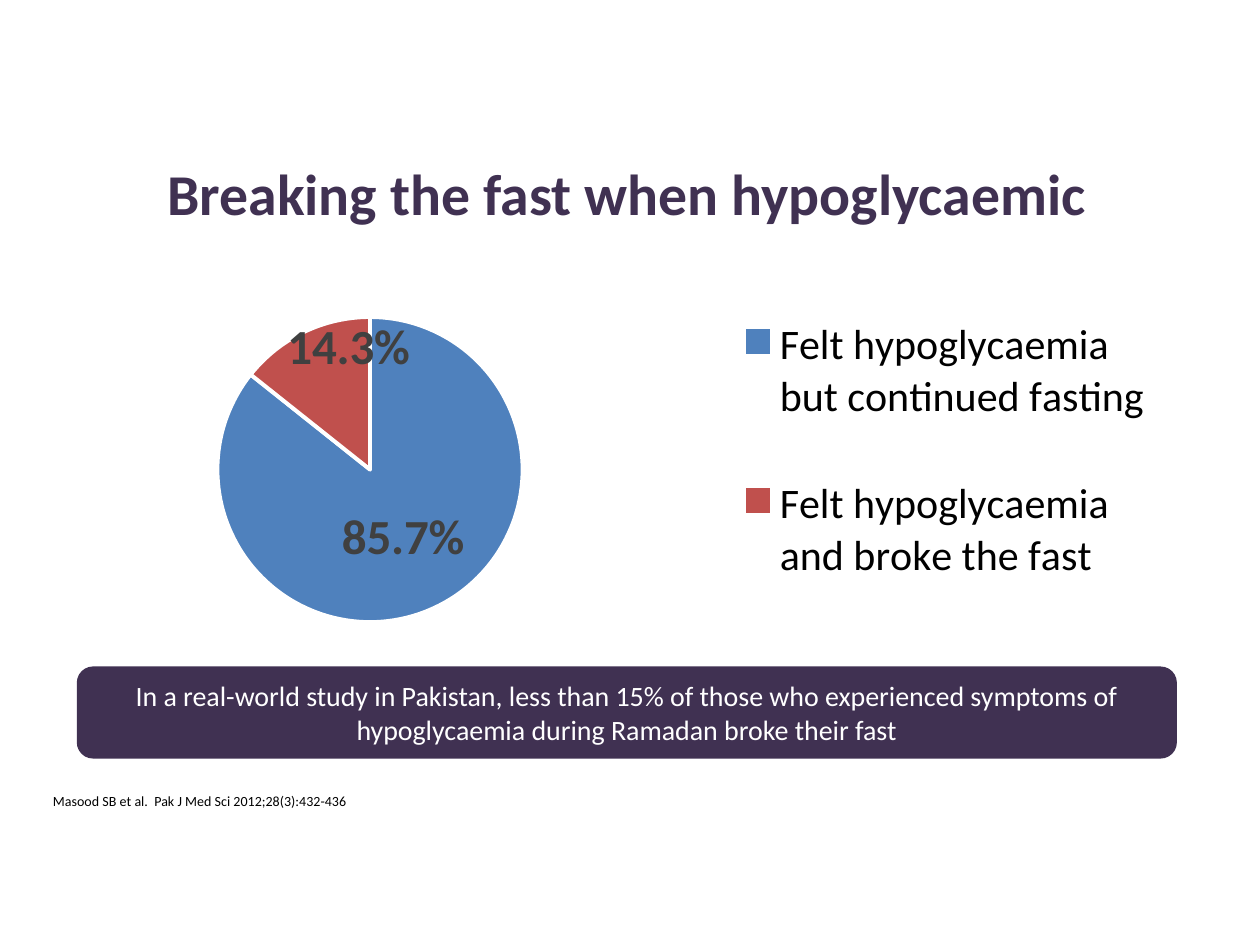
from lxml import etree
from pptx import Presentation
from pptx.chart.data import CategoryChartData
from pptx.dml.color import RGBColor
from pptx.enum.chart import XL_CHART_TYPE, XL_LABEL_POSITION, XL_LEGEND_POSITION
from pptx.enum.shapes import MSO_SHAPE
from pptx.enum.text import MSO_ANCHOR, MSO_AUTO_SIZE, PP_ALIGN
from pptx.oxml.ns import qn
from pptx.util import Inches, Pt

PIE = XL_CHART_TYPE.PIE
LABEL_CENTER = XL_LABEL_POSITION.CENTER
LEGEND_RIGHT = XL_LEGEND_POSITION.RIGHT
ROUNDED = MSO_SHAPE.ROUNDED_RECTANGLE
MIDDLE, BOTTOM = MSO_ANCHOR.MIDDLE, MSO_ANCHOR.BOTTOM
LEFT, CENTER = PP_ALIGN.LEFT, PP_ALIGN.CENTER
NO_AUTOFIT = MSO_AUTO_SIZE.NONE

FONT = "Calibri"
PURPLE, WHITE, BLACK, GREY = "403152", "FFFFFF", "000000", "404040"
WIDTH, HEIGHT = 10, 7.5

TITLE = "Breaking the fast when hypoglycaemic"
SLICES = [
    ("Felt hypoglycaemia but continued fasting", 0.857, "4F81BD"),
    ("Felt hypoglycaemia and broke the fast", 0.143, "C0504D"),
]
MESSAGE = ("In a real-world study in Pakistan, less than 15% of those who experienced "
           "symptoms of hypoglycaemia during Ramadan broke their fast")
CITATION = "Masood SB et al.  Pak J Med Sci 2012;28(3):432-436"

BOXES = {
    "title": (0.32, 1.31, 9.31, 0.43),
    "chart": (0.33, 1.87, 9.31, 3.23),
    "message": (0.62, 5.3, 8.71, 0.71),
    "citation": (0.32, 6.23, 7.74, 0.24),
}
PLOT_LAYOUT = {"layoutTarget": "inner", "xMode": "edge", "yMode": "edge",
               "x": 0.02, "y": 0.2, "w": 0.52, "h": 0.75}
LEGEND_LAYOUT = {"xMode": "edge", "yMode": "edge",
                 "x": 0.59, "y": 0.07, "w": 0.36, "h": 0.92}
SMALL_SLICE_LABEL_LAYOUT = {"x": 0.01, "y": -0.13}


def color(value):
    return RGBColor.from_string(value)


def style_font(font, size, value, bold=False):
    font.name = FONT
    font.size = Pt(size)
    font.bold = bold
    font.color.rgb = color(value)


def place(shape, name):
    shape.left, shape.top, shape.width, shape.height = map(Inches, BOXES[name])


def write(shape, text, size, value, alignment, anchor, bold=False):
    frame = shape.text_frame
    frame.word_wrap = True
    frame.auto_size = NO_AUTOFIT
    frame.vertical_anchor = anchor
    paragraph = frame.paragraphs[0]
    paragraph.alignment = alignment
    paragraph.space_before = Pt(0)
    run = paragraph.add_run()
    run.text = text
    style_font(run.font, size, value, bold)
    return paragraph


def set_layout(element, values, predecessor):
    for existing in element.findall(qn("c:layout")):
        element.remove(existing)
    layout = etree.Element(qn("c:layout"))
    manual = etree.SubElement(layout, qn("c:manualLayout"))
    for key, value in values.items():
        etree.SubElement(manual, qn("c:" + key)).set("val", str(value))
    if predecessor is None:
        element.insert(0, layout)
    else:
        element.find(qn(predecessor)).addnext(layout)
    return layout


def style_label(label):
    style_font(label.font, 28, GREY, True)
    label.position = LABEL_CENTER
    text_properties = next(label.font._element.iterancestors(qn("c:txPr")))
    text_properties.find(qn("a:bodyPr")).set("wrap", "none")
    return text_properties.getparent()


def add_pie(slide):
    data = CategoryChartData(number_format="0.0%")
    data.categories = [name for name, _, _ in SLICES]
    data.add_series("Series 1", [share for _, share, _ in SLICES])
    chart = slide.shapes.add_chart(PIE, *map(Inches, BOXES["chart"]), data).chart
    chart.has_title = False
    style_font(chart.font, 10, BLACK)

    chart.has_legend = True
    legend = chart.legend
    legend.position = LEGEND_RIGHT
    legend.include_in_layout = False
    style_font(legend.font, 24, BLACK)
    set_layout(legend._element, LEGEND_LAYOUT, "c:legendPos")

    plot = chart.plots[0]
    plot.vary_by_categories = True
    set_layout(plot._element.getparent(), PLOT_LAYOUT, None)
    series = plot.series[0]
    for index, (_, _, fill) in enumerate(SLICES):
        point = series.points[index].format
        point.fill.solid()
        point.fill.fore_color.rgb = color(fill)
        point.line.color.rgb = color(WHITE)
        point.line.width = Pt(2.25)

    labels = series.data_labels
    labels.show_value = True
    labels.show_percentage = False
    labels.number_format = "0.0%"
    labels.number_format_is_linked = False
    style_label(labels)

    element = style_label(series.points[1].data_label)
    layout = set_layout(element, SMALL_SLICE_LABEL_LAYOUT, "c:idx")
    number_format = etree.Element(qn("c:numFmt"))
    number_format.set("formatCode", "0.0%")
    number_format.set("sourceLinked", "0")
    layout.addnext(number_format)


def add_message(slide):
    shape = slide.shapes.add_shape(ROUNDED, *map(Inches, BOXES["message"]))
    shape.shadow.inherit = False
    shape.fill.solid()
    shape.fill.fore_color.rgb = color(PURPLE)
    shape.line.color.rgb = color(PURPLE)
    shape.line.width = Pt(1.5)
    write(shape, MESSAGE, 16, WHITE, CENTER, MIDDLE)


def main():
    presentation = Presentation()
    presentation.slide_width, presentation.slide_height = Inches(WIDTH), Inches(HEIGHT)
    slide = presentation.slides.add_slide(presentation.slide_layouts[1])
    add_pie(slide)

    title = slide.shapes.title
    place(title, "title")
    write(title, TITLE, 33, PURPLE, CENTER, MIDDLE, True)

    citation = slide.placeholders[1]
    place(citation, "citation")
    paragraph = write(citation, CITATION, 8, BLACK, LEFT, BOTTOM)
    properties = paragraph._p.get_or_add_pPr()
    properties.set("marL", "0")
    properties.set("indent", "0")
    etree.SubElement(properties, qn("a:buNone"))

    add_message(slide)
    presentation.save("out.pptx")


if __name__ == "__main__":
    main()
